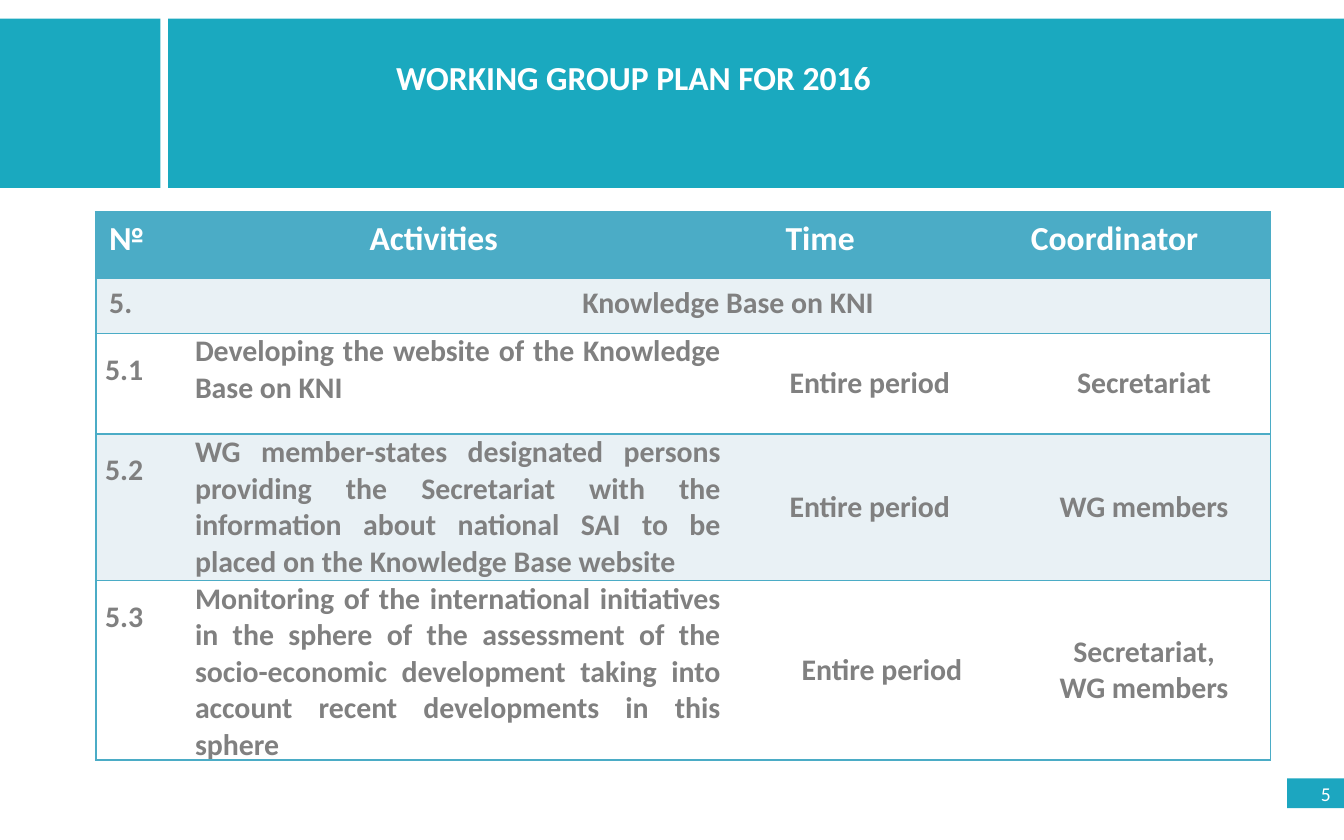
from lxml.etree import SubElement
from pptx import Presentation
from pptx.dml.color import RGBColor
from pptx.enum.shapes import MSO_SHAPE
from pptx.enum.text import MSO_ANCHOR, MSO_AUTO_SIZE, PP_ALIGN
from pptx.oxml import parse_xml
from pptx.oxml.ns import nsdecls, qn
from pptx.util import Pt

TEAL = RGBColor(0x1A, 0xA9, 0xBF)
NUMBER_TEAL = RGBColor(0x1C, 0xA6, 0xC0)
HEADER_BLUE = RGBColor(0x4B, 0xAC, 0xC6)
PALE = RGBColor(0xE9, 0xF1, 0xF5)
WHITE = RGBColor(0xFF, 0xFF, 0xFF)
GRAY = RGBColor(0x80, 0x80, 0x80)
LEFT, CENTER, JUSTIFY = PP_ALIGN.LEFT, PP_ALIGN.CENTER, PP_ALIGN.JUSTIFY


def write(frame, text, size, color, bold=True, align=LEFT, spacing=None):
    """Write one paragraph per line of text."""
    for index, line in enumerate(text.split("\n")):
        para = frame.add_paragraph() if index else frame.paragraphs[0]
        para.alignment = align
        if spacing:
            para.line_spacing = spacing
        span = para.add_run()
        span.text = line
        span.font.name = "Calibri"
        span.font.size = Pt(size)
        span.font.bold = bold
        span.font.color.rgb = color


def set_borders(cell, sides):
    """Draw the named sides (L, R, T, B) and clear the others."""
    properties = cell._tc.get_or_add_tcPr()
    for index, side in enumerate("LRTB"):
        line = parse_xml(f'<a:ln{side} {nsdecls("a")} w="12700"/>')
        if side in sides:
            fill = SubElement(line, qn("a:solidFill"))
            SubElement(fill, qn("a:srgbClr"), val=str(HEADER_BLUE))
        else:
            SubElement(line, qn("a:noFill"))
        properties.insert(index, line)


deck = Presentation()
deck.slide_width, deck.slide_height = Pt(720), Pt(450)
page = deck.slides.add_slide(deck.slide_layouts[6])

# Banner blocks and the page number tab
for left, top, width, height, color, text in (
    (90, 10, 630, 90.7, TEAL, ""),
    (0, 10, 86, 90.7, TEAL, ""),
    (689.5, 417, 30.5, 16, NUMBER_TEAL, "5"),
):
    block = page.shapes.add_shape(MSO_SHAPE.RECTANGLE, Pt(left), Pt(top), Pt(width), Pt(height))
    block.shadow.inherit = False
    block.fill.solid()
    block.fill.fore_color.rgb = color
    block.line.fill.background()
    if text:
        block.text_frame.vertical_anchor = MSO_ANCHOR.MIDDLE
        write(block.text_frame, text, 10.5, WHITE, bold=False, align=PP_ALIGN.RIGHT)

# Title
title = page.shapes.add_textbox(Pt(205.2), Pt(26.7), Pt(271.5), Pt(29))
title.text_frame.word_wrap = False
title.text_frame.auto_size = MSO_AUTO_SIZE.SHAPE_TO_FIT_TEXT
write(title.text_frame, "WORKING GROUP PLAN FOR 2016", 18, WHITE)

# Plan table: each entry is first column, last column, text
column_widths = (48.2, 265.7, 34.6, 113.8, 31.7, 135.4)
row_heights = (35.6, 29.5, 54, 78.5, 96)
plan = (
    ((0, 0, "№"), (1, 1, "Activities"), (2, 3, "Time"), (4, 5, "Coordinator")),
    ((0, 0, "5."), (1, 5, "Knowledge Base on KNI")),
    ((0, 0, "5.1"), (1, 2, "Developing the website of the Knowledge Base on KNI"),
     (3, 4, "Entire period"), (5, 5, "Secretariat")),
    ((0, 0, "5.2"), (1, 2, "WG member-states designated persons providing the Secretariat with "
                           "the information about national SAI to be placed on the Knowledge "
                           "Base website"),
     (3, 4, "Entire period"), (5, 5, "WG members")),
    ((0, 0, "5.3"), (1, 2, "Monitoring of the international initiatives in the sphere of the "
                           "assessment of the socio-economic development taking into account "
                           "recent developments in this sphere"),
     (3, 4, "Entire period"), (5, 5, "Secretariat,\nWG members")),
)
table = page.shapes.add_table(
    len(row_heights), len(column_widths), Pt(51.3), Pt(113.5),
    Pt(sum(column_widths)), Pt(sum(row_heights)),
).table
for column, width in zip(table.columns, column_widths):
    column.width = Pt(width)
for row, height in zip(table.rows, row_heights):
    row.height = Pt(height)

# Row fills and outer borders
for row_index in range(len(row_heights)):
    for column_index in range(len(column_widths)):
        cell = table.cell(row_index, column_index)
        cell.fill.solid()
        cell.fill.fore_color.rgb = (HEADER_BLUE, PALE, WHITE, PALE, WHITE)[row_index]
        ends = {0: "L", len(column_widths) - 1: "R"}
        set_borders(cell, "TB" + ends.get(column_index, ""))

# Cell text
for row_index, entries in enumerate(plan):
    size, color = (16, GRAY) if row_index else (18, WHITE)
    for first, last, text in entries:
        cell = table.cell(row_index, first)
        if last > first:
            cell.merge(table.cell(row_index, last))
            if last == len(column_widths) - 1:
                cell._tc.tcPr.remove(cell._tc.tcPr.find(qn("a:lnR")))
                cell._tc.tcPr.insert(1, parse_xml(
                    f'<a:lnR {nsdecls("a")} w="12700"><a:solidFill>'
                    f'<a:srgbClr val="{HEADER_BLUE}"/></a:solidFill></a:lnR>'))
        align = CENTER if first else LEFT
        spacing = None
        if row_index >= 2:
            cell.margin_left = cell.margin_right = Pt(5)
            cell.margin_top = cell.margin_bottom = 0
            if first == 0:
                spacing = 1.5
            elif first == 1:
                align = JUSTIFY
                cell.margin_right = Pt(13.5)
            else:
                cell.vertical_anchor = MSO_ANCHOR.MIDDLE
                if first == 3 and row_index < 4:
                    cell.margin_right = Pt(18)
        write(cell.text_frame, text, size, color, align=align, spacing=spacing)

deck.save("out.pptx")
